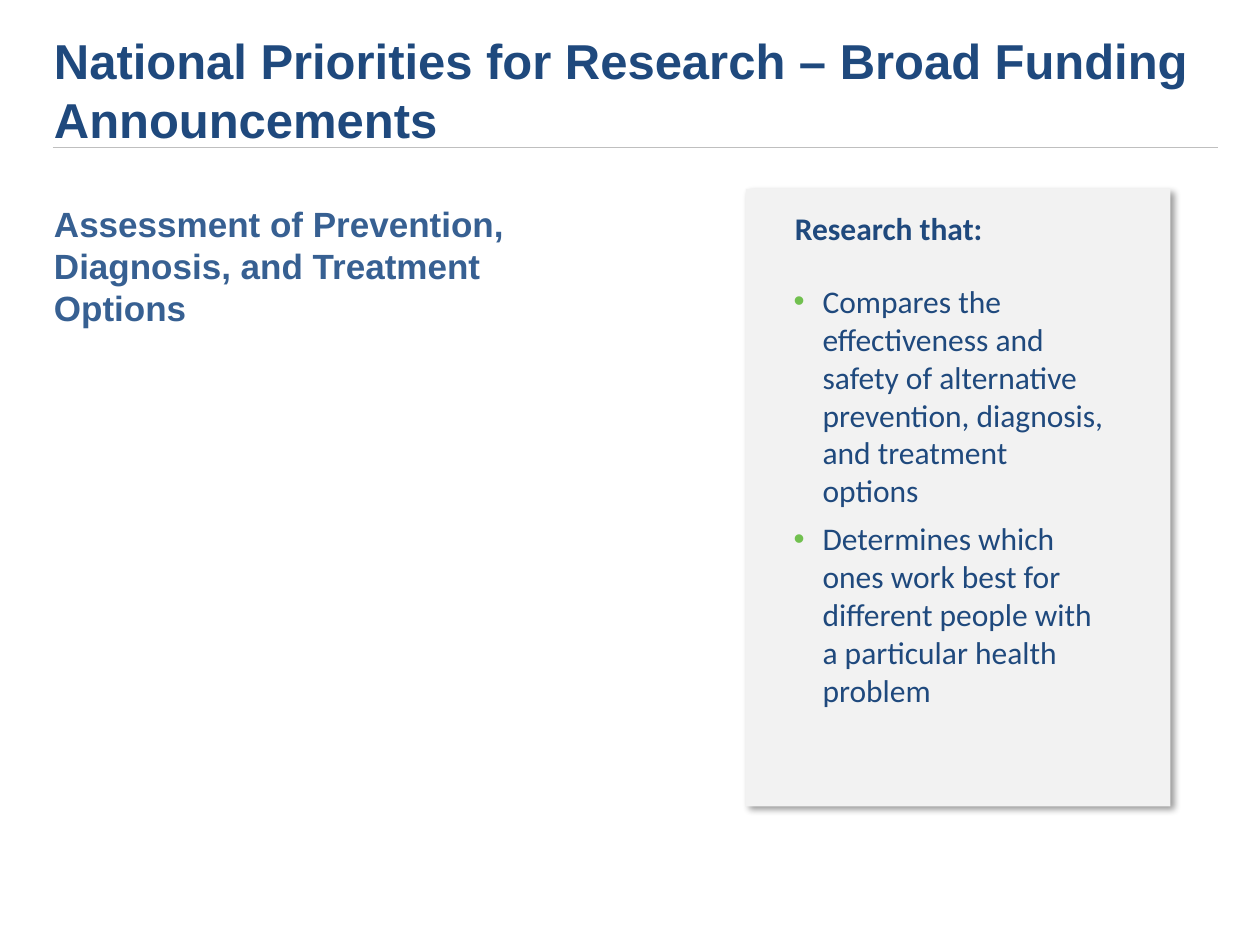
import pptx
import pptx.util
import pptx.oxml
import pptx.oxml.ns
import pptx.dml.color
import pptx.enum.shapes
from lxml import etree

Inches, Pt = pptx.util.Inches, pptx.util.Pt
qn = pptx.oxml.ns.qn

COLORS = {"navy": "1F497D", "blue": "376092", "rule": "BFBFBF",
          "panel": "F2F2F2", "bullet": "71C04F", "shadow": "000000"}
TITLE = {"name": "Arial", "size": Pt(28), "bold": True, "color": "navy"}
TOPIC = {**TITLE, "size": Pt(20), "color": "blue"}
BODY = {"name": "Calibri", "size": Pt(18), "bold": False, "color": "navy"}
HEADING = {**BODY, "bold": True}


class Deck:
    """Hold the style and the current slide, and add elements to it."""

    def __init__(self, prs, colors):
        self.colors = colors
        self.s = prs.slides.add_slide(prs.slide_layouts[6])

    def rgb(self, name):
        return pptx.dml.color.RGBColor.from_string(self.colors[name])

    def text(self, box, paragraphs, font, spacing=None, bullet=False):
        sp = self.s.shapes.add_textbox(*map(Inches, box))
        tf = sp.text_frame
        tf.word_wrap = True
        for i, words in enumerate(paragraphs):
            p = tf.add_paragraph() if i else tf.paragraphs[0]
            for key, value in (spacing or {}).items():
                setattr(p, key, value)
            if bullet:
                self.bullet(p)
            r = p.add_run()
            r.text = words
            for key, value in font.items():
                if key == "color":
                    r.font.color.rgb = self.rgb(value)
                else:
                    setattr(r.font, key, value)

    def bullet(self, p):
        pPr = p._p.get_or_add_pPr()
        indent = Inches(0.23)
        pPr.set("marL", str(indent))
        pPr.set("indent", str(-indent))
        color = etree.SubElement(pPr, qn("a:buClr"))
        etree.SubElement(color, qn("a:srgbClr"), val=self.colors["bullet"])
        etree.SubElement(pPr, qn("a:buFont"), typeface="Arial")
        etree.SubElement(pPr, qn("a:buChar"), char="•")
        tabs = etree.SubElement(pPr, qn("a:tabLst"))
        etree.SubElement(tabs, qn("a:tab"), pos=str(Inches(0.38)), algn="l")

    def line(self, x1, y1, x2, y2, color, width):
        sp = self.s.shapes.add_connector(
            pptx.enum.shapes.MSO_CONNECTOR.STRAIGHT, *map(Inches, (x1, y1, x2, y2)))
        sp.line.color.rgb = self.rgb(color)
        sp.line.width = Pt(width)
        etree.SubElement(sp._element.spPr, qn("a:effectLst"))

    def panel(self, box, color):
        sp = self.s.shapes.add_shape(
            pptx.enum.shapes.MSO_SHAPE.RECTANGLE, *map(Inches, box))
        sp.fill.solid()
        sp.fill.fore_color.rgb = self.rgb(color)
        sp.line.fill.background()
        sp.shadow.inherit = False
        effects = sp._element.spPr.find(qn("a:effectLst"))
        shadow = etree.SubElement(
            effects, qn("a:outerShdw"), blurRad=str(Pt(4)), dist=str(Pt(3)),
            dir=str(45 * 60000), algn="tl", rotWithShape="0")
        tint = etree.SubElement(shadow, qn("a:srgbClr"), val=self.colors["shadow"])
        etree.SubElement(tint, qn("a:alpha"), val="40000")


def main():
    prs = pptx.Presentation()
    prs.slide_width, prs.slide_height = Inches(10), Inches(7.5)
    deck = Deck(prs, COLORS)
    deck.text((0.33, 0.19, 9.25, 0.75),
              ["National Priorities for Research – Broad Funding Announcements"],
              TITLE)
    deck.line(0.42, 1.17, 9.67, 1.17, "rule", 0.25)
    deck.text((0.33, 1.56, 4.18, 1.11),
              ["Assessment of Prevention, Diagnosis, and Treatment Options"],
              TOPIC, {"space_after": Pt(12)})
    deck.panel((5.92, 1.5, 3.37, 4.9), "panel")
    deck.text((6.21, 1.61, 3.41, 0.71), ["Research that:"], HEADING)
    deck.text((6.2, 2.19, 2.69, 3.52),
              ["Compares the effectiveness and safety of alternative prevention, "
               "diagnosis, and treatment options",
               "Determines which ones work best for different people with a "
               "particular health problem"],
              BODY, {"space_after": Pt(6)}, bullet=True)
    prs.save("out.pptx")


if __name__ == "__main__":
    main()
